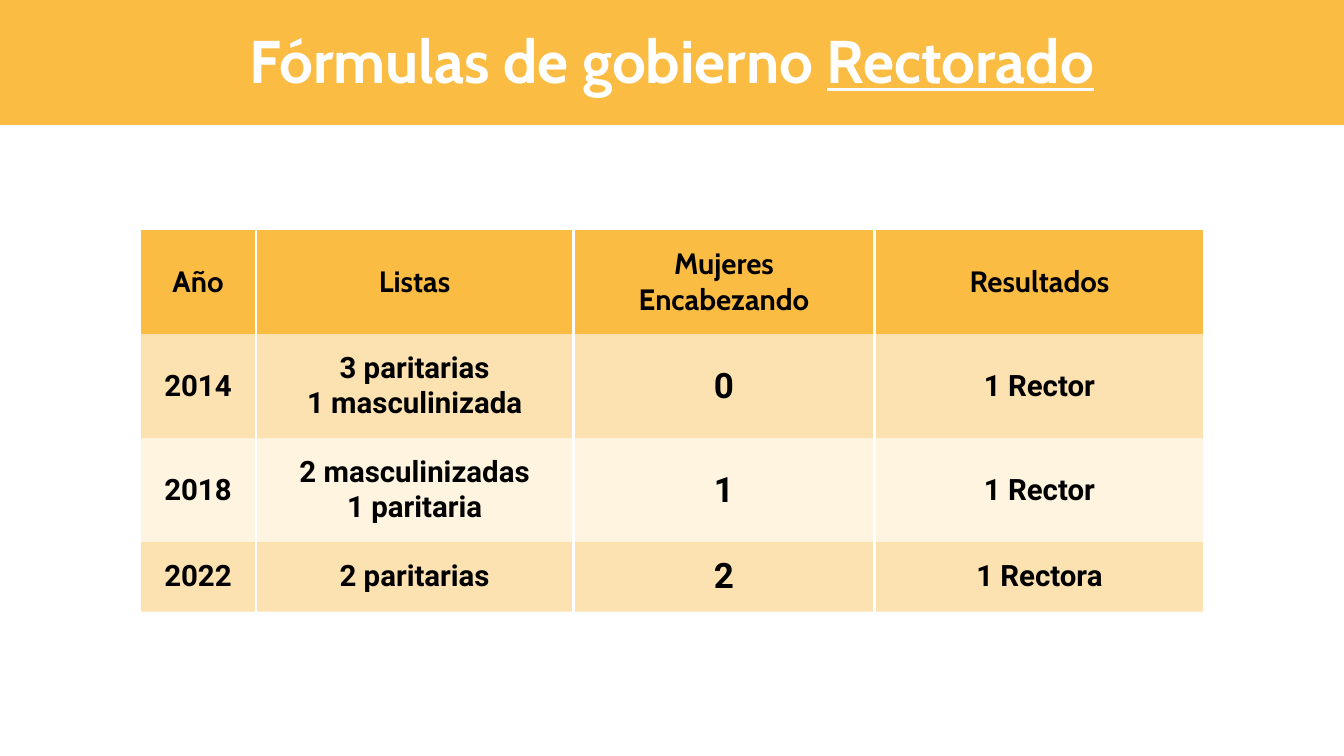
from lxml.etree import SubElement as Sub
from pptx import Presentation
from pptx.dml.color import RGBColor as Rgb
from pptx.enum.shapes import MSO_SHAPE as Shape
from pptx.enum.text import MSO_ANCHOR as Anchor, PP_ALIGN as Align
from pptx.oxml import parse_xml
from pptx.oxml.ns import nsdecls, qn
from pptx.util import Cm, Pt

TITLE = [("Fórmulas de gobierno ", False), ("Rectorado", True)]
ROWS = [
    ("Año", "Listas", "Mujeres Encabezando", "Resultados"),
    ("2014", "3 paritarias\n1 masculinizada", "0", "1 Rector"),
    ("2018", "2 masculinizadas\n1 paritaria", "1", "1 Rector"),
    ("2022", "2 paritarias", "2", "1 Rectora"),
]
WIDTHS = (2.92, 8, 7.59, 8.31)
HEIGHTS = (2.62, 2.62, 2.62, 1.75)
ALPHAS = (100, 42, 16, 42)
COLORS = {"gold": "FABC43", "white": "FFFFFF", "black": "000000"}
PAD = Cm(0.33)
LINE = Pt(2.25)


def style(par, face, size, color):
    par.alignment = Align.CENTER
    font = par.font
    font.name, font.size, font.bold = face, Pt(size), True
    font.color.rgb = Rgb.from_string(COLORS[color])


def pad(box):
    box.margin_left = box.margin_right = box.margin_top = box.margin_bottom = PAD


def paint(cell, alpha):
    cell.fill.solid()
    cell.fill.fore_color.rgb = Rgb.from_string(COLORS["gold"])
    props = cell._tc.get_or_add_tcPr()
    if alpha < 100:
        tint = props.find(".//" + qn("a:srgbClr"))
        Sub(tint, qn("a:alpha")).set("val", str(alpha * 1000))
    white = f'<a:solidFill><a:srgbClr val="{COLORS["white"]}"/></a:solidFill>'
    for i, side in enumerate("LRTB"):
        ink = white if side in "LR" else "<a:noFill/>"
        edge = f'<a:ln{side} {nsdecls("a")} w="{LINE}">{ink}</a:ln{side}>'
        props.insert(i, parse_xml(edge))


def add_grid(slide):
    frame = slide.shapes.add_table(len(ROWS), len(WIDTHS), Cm(3.53), Cm(5.8),
                                   Cm(sum(WIDTHS)), Cm(sum(HEIGHTS)))
    grid = frame.table
    grid.horz_banding = False
    for col, width in zip(grid.columns, WIDTHS):
        col.width = Cm(width)
    for r, (row, texts) in enumerate(zip(grid.rows, ROWS)):
        row.height = Cm(HEIGHTS[r])
        for c, (cell, text) in enumerate(zip(row.cells, texts)):
            cell.text = text
            cell.vertical_anchor = Anchor.MIDDLE
            pad(cell)
            paint(cell, ALPHAS[r])
            for par in cell.text_frame.paragraphs:
                style(par, "Roboto" if r else "Cabin", 25 if r and c == 2 else 21, "black")


def add_head(slide):
    band = slide.shapes.add_shape(Shape.RECTANGLE, Cm(-0.33), Cm(-0.03), Cm(34.47), Cm(3.18))
    band.shadow.inherit = False
    band.fill.solid()
    band.fill.fore_color.rgb = Rgb.from_string(COLORS["gold"])
    band.line.fill.background()
    box = slide.shapes.add_textbox(Cm(2.33), Cm(0.25), Cm(29.21), Cm(2.52)).text_frame
    box.word_wrap = True
    pad(box)
    par = box.paragraphs[0]
    style(par, "Cabin", 43, "white")
    for text, under in TITLE:
        run = par.add_run()
        run.text = text
        if under:
            run.font.underline = True


def main():
    """Build the slide on governing formulas for the rectorate."""
    deck = Presentation()
    deck.slide_width, deck.slide_height = Cm(33.87), Cm(19.05)
    slide = deck.slides.add_slide(deck.slide_layouts[6])
    add_grid(slide)
    add_head(slide)
    deck.save("out.pptx")


if __name__ == "__main__":
    main()
